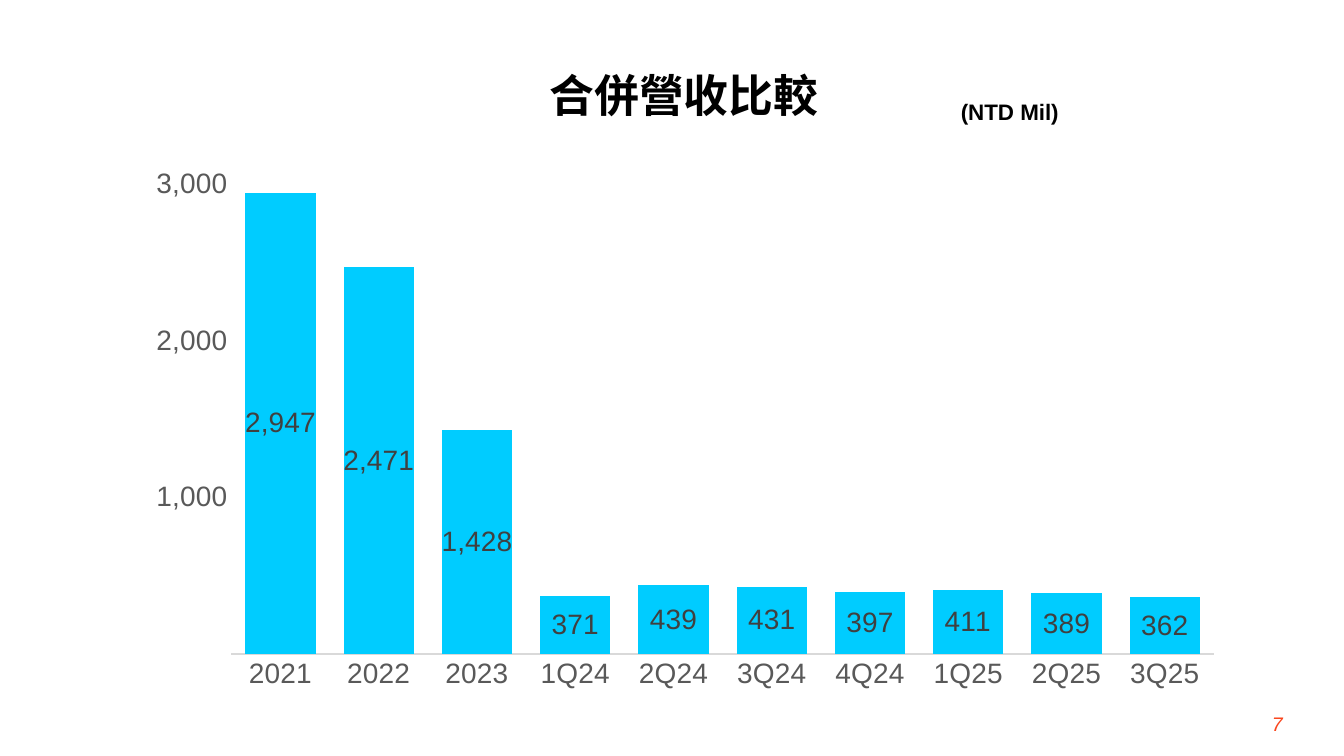
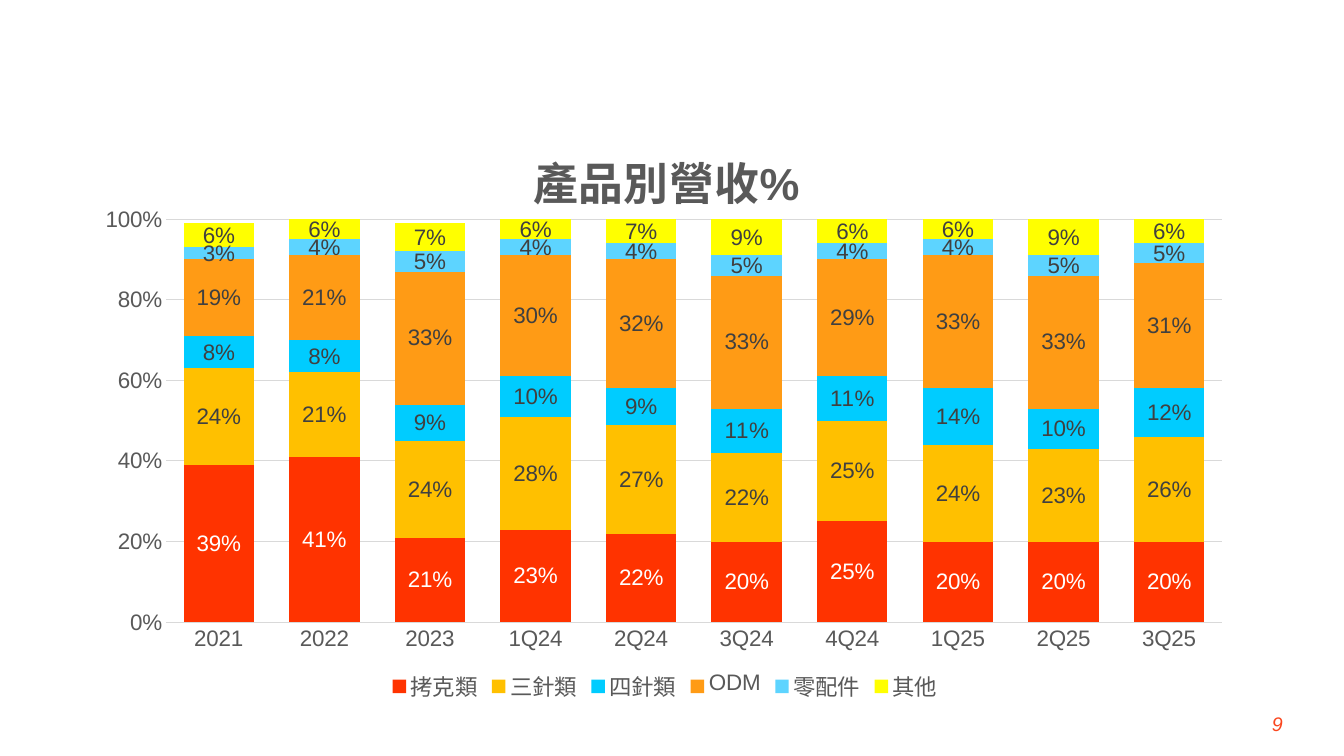
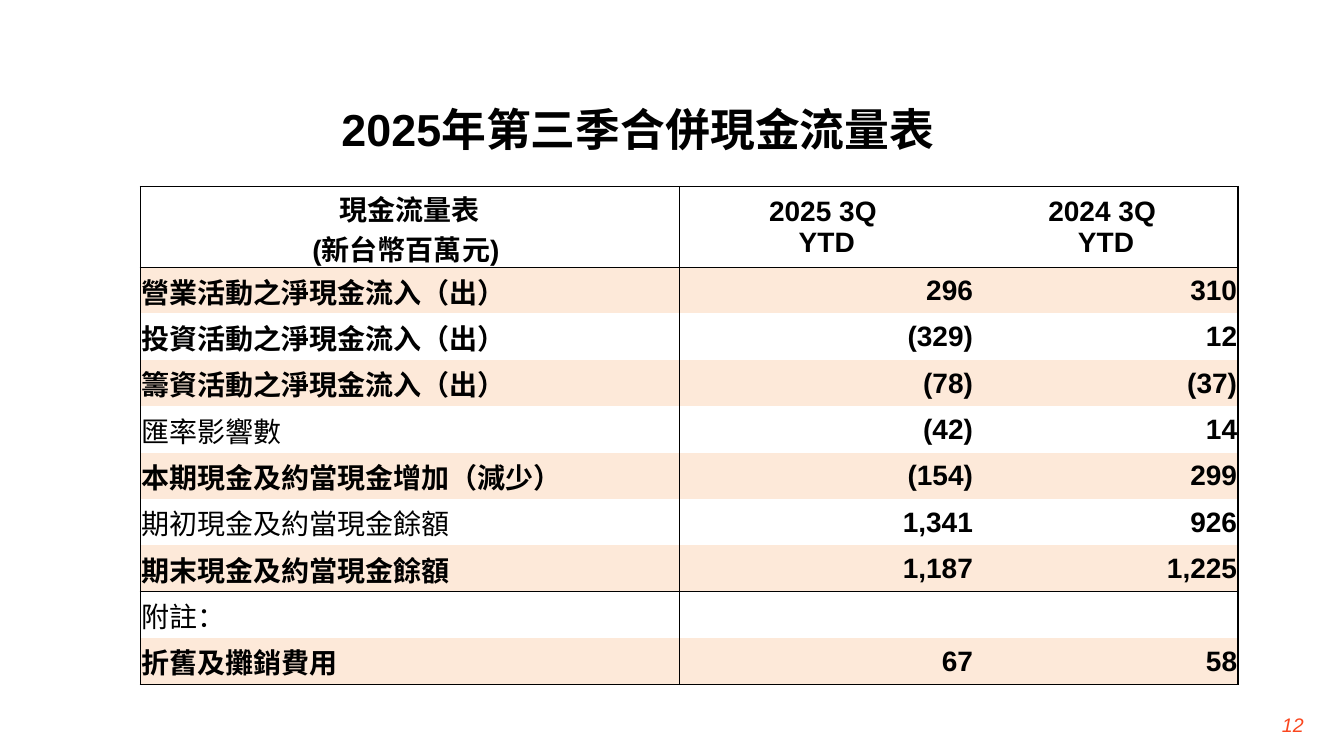
from dataclasses import dataclass
from typing import Any, Optional

from lxml import etree
from pptx import Presentation
from pptx.chart.data import CategoryChartData
from pptx.dml.color import RGBColor
from pptx.enum.chart import XL_CHART_TYPE as ChartType
from pptx.enum.chart import XL_LABEL_POSITION as LabelPosition
from pptx.enum.chart import XL_LEGEND_POSITION as LegendPosition
from pptx.enum.chart import XL_TICK_MARK as TickMark
from pptx.enum.shapes import MSO_SHAPE as Preset
from pptx.enum.text import MSO_ANCHOR as Anchor
from pptx.enum.text import PP_ALIGN as Align
from pptx.oxml.ns import qn
from pptx.util import Inches, Pt

COLORS = {
    "white": "FFFFFF", "black": "000000", "page": "FA461E", "axis": "595959",
    "rule": "D9D9D9", "label": "404040", "band": "FDE9D9", "cyan": "00CCFF",
    "red": "FF3300", "amber": "FFC000", "orange": "FF9B15", "sky": "5DD4FF",
    "yellow": "FFFF00",
}
LATIN = "Arial"
CJK = "Noto Sans CJK TC"
TITLE_FORMAT = {"size": Pt(32), "bold": True}
PAGE_FORMAT = {"size": Pt(14), "italic": True}
UNIT_FORMAT = {"size": Pt(16), "bold": True}
PERIODS = ["2021", "2022", "2023", "1Q24", "2Q24", "3Q24", "4Q24", "1Q25", "2Q25", "3Q25"]
THOUSANDS = r"#,###,;[Red]\(#,\)"

Box = tuple[float, float, float, float]


@dataclass(frozen=True)
class Series:
    name: str
    values: list[float]
    color: str
    label_color: str = "label"


@dataclass(frozen=True)
class ChartSpec:
    box: Box
    plot: Box
    series: list[Series]
    number_format: str
    maximum: float
    major: float
    size: int
    gap: int
    axis_width: float
    title: Optional[str] = None
    gridlines: bool = False
    legend: bool = False


@dataclass(frozen=True)
class CashRow:
    label: str
    current: str = ""
    previous: str = ""
    bold: bool = True


REVENUE = ChartSpec(
    box=(1.31, 1.56, 10.95, 5.36),
    plot=(0.09, 0.05, 0.89, 0.87),
    series=[Series("Series 1", [1000 * v for v in (
        2947, 2471, 1428, 371, 439, 431, 397, 411, 389, 362)], "cyan")],
    number_format=THOUSANDS, maximum=3000000, major=1000000,
    size=20, gap=40, axis_width=1,
)
PRODUCTS = ChartSpec(
    box=(0.84, 1.04, 11.51, 5.97),
    plot=(0.07, 0.19, 0.91, 0.67),
    series=[
        Series("拷克類", [0.39, 0.41, 0.21, 0.23, 0.22, 0.2, 0.25, 0.2, 0.2, 0.2], "red", "white"),
        Series("三針類", [0.24, 0.21, 0.24, 0.28, 0.27, 0.22, 0.25, 0.24, 0.23, 0.26], "amber"),
        Series("四針類", [0.08, 0.08, 0.09, 0.1, 0.09, 0.11, 0.11, 0.14, 0.1, 0.12], "cyan"),
        Series("ODM", [0.19, 0.21, 0.33, 0.3, 0.32, 0.33, 0.29, 0.33, 0.33, 0.31], "orange"),
        Series("零配件", [0.03, 0.04, 0.05, 0.04, 0.04, 0.05, 0.04, 0.04, 0.05, 0.05], "sky"),
        Series("其他", [0.06, 0.06, 0.07, 0.06, 0.07, 0.09, 0.06, 0.06, 0.09, 0.06], "yellow"),
    ],
    number_format="0%", maximum=1, major=0.2,
    size=16, gap=50, axis_width=0.75,
    title="產品別營收%", gridlines=True, legend=True,
)
CASH_HEADERS = [
    [[("現金流量表", CJK)], [("(", LATIN), ("新台幣百萬元", CJK), (") ", LATIN)]],
    [[("2025 3Q ", LATIN)], [("YTD", LATIN)]],
    [[("2024 3Q ", LATIN)], [("YTD", LATIN)]],
]
CASH_ROWS = [
    CashRow("營業活動之淨現金流入（出）", "296", "310"),
    CashRow("投資活動之淨現金流入（出）", "(329)", "12"),
    CashRow("籌資活動之淨現金流入（出）", "(78)", "(37)"),
    CashRow("匯率影響數", "(42)", "14", bold=False),
    CashRow("本期現金及約當現金增加（減少）", "(154)", "299"),
    CashRow("期初現金及約當現金餘額", "1,341", "926", bold=False),
    CashRow("期末現金及約當現金餘額", "1,187", "1,225"),
    CashRow("附註：", bold=False),
    CashRow("折舊及攤銷費用", "67", "58"),
]


def rgb(name: str) -> RGBColor:
    return RGBColor.from_string(COLORS[name])


def inches(box: Box) -> list[int]:
    return [Inches(value) for value in box]


def apply(target: Any, formats: dict[str, Any]) -> None:
    for attribute, value in formats.items():
        setattr(target, attribute, value)


def style_font(font: Any, color: str, formats: dict[str, Any], face: str = LATIN) -> None:
    apply(font, {"name": face, **formats})
    font.color.rgb = rgb(color)


def add_run(paragraph: Any, text: str, color: str, formats: dict[str, Any],
            face: str = LATIN) -> None:
    run = paragraph.add_run()
    run.text = text
    style_font(run.font, color, formats, face)
    east_asian = etree.Element(qn("a:ea"), typeface=CJK)
    run.font._element.find(qn("a:latin")).addnext(east_asian) if hasattr(
        run.font, "_element") else run._r.rPr.find(qn("a:latin")).addnext(east_asian)


def add_text(slide: Any, box: Box, text: str, color: str, formats: dict[str, Any],
             align: Align, wrap: bool = True) -> None:
    frame = slide.shapes.add_textbox(*inches(box)).text_frame
    frame.word_wrap = wrap
    frame.paragraphs[0].alignment = align
    add_run(frame.paragraphs[0], text, color, formats)


def add_page_number(slide: Any, number: int, left: float = 12.07, top: float = 7.01) -> None:
    add_text(slide, (left, top, 0.75, 0.4), str(number), "page", PAGE_FORMAT, Align.RIGHT)


def add_title(slide: Any, box: Box, text: str, align: Align) -> None:
    plate = slide.shapes.add_shape(Preset.ROUNDED_RECTANGLE, *inches(box))
    plate.adjustments[0] = 0.23
    plate.shadow.inherit = False
    plate.fill.solid()
    plate.fill.fore_color.rgb = rgb("white")
    plate.line.fill.background()
    apply(plate.text_frame, {"word_wrap": True, "vertical_anchor": Anchor.MIDDLE})
    plate.text_frame.paragraphs[0].alignment = align
    add_run(plate.text_frame.paragraphs[0], text, "black", TITLE_FORMAT)


def place(element: Any, index: int, values: dict[str, Any]) -> None:
    for present in element.findall(qn("c:layout")):
        element.remove(present)
    layout = etree.Element(qn("c:layout"))
    manual = etree.SubElement(layout, qn("c:manualLayout"))
    for tag, value in values.items():
        etree.SubElement(manual, qn(f"c:{tag}"), val=str(value))
    element.insert(index, layout)


def add_column_chart(slide: Any, spec: ChartSpec) -> None:
    data = CategoryChartData()
    data.categories = PERIODS
    for series in spec.series:
        data.add_series(series.name, series.values)
    chart = slide.shapes.add_chart(ChartType.COLUMN_STACKED, *inches(spec.box), data).chart
    text_format = {"size": Pt(spec.size), "bold": False}
    style_font(chart.font, "black", text_format)

    apply(chart, {"has_title": spec.title is not None, "has_legend": spec.legend})
    edges = {"xMode": "edge", "yMode": "edge"}
    if spec.title:
        add_run(chart.chart_title.text_frame.paragraphs[0], spec.title, "axis", TITLE_FORMAT)
        place(chart.chart_title.element, 1, {**edges, "x": 0.38, "y": 0.05})
    if spec.legend:
        apply(chart.legend, {"position": LegendPosition.BOTTOM, "include_in_layout": False})
        style_font(chart.legend.font, "axis", text_format)
    place(chart.element.find(f".//{qn('c:plotArea')}"), 0,
          {"layoutTarget": "inner", **edges, **dict(zip("xywh", spec.plot))})

    periods, amounts = chart.category_axis, chart.value_axis
    for axis in (periods, amounts):
        apply(axis, {"major_tick_mark": TickMark.NONE, "minor_tick_mark": TickMark.NONE})
        style_font(axis.tick_labels.font, "axis", text_format)
    apply(amounts, {"minimum_scale": 0, "maximum_scale": spec.maximum,
                    "major_unit": spec.major, "has_major_gridlines": spec.gridlines})
    amounts.format.line.fill.background()
    number_format = {"number_format": spec.number_format, "number_format_is_linked": False}
    apply(amounts.tick_labels, number_format)
    rules = [periods.format.line]
    if spec.gridlines:
        rules.append(amounts.major_gridlines.format.line)
    for rule in rules:
        rule.color.rgb = rgb("rule")
        rule.width = Pt(spec.axis_width)

    columns = chart.plots[0]
    apply(columns, {"gap_width": spec.gap, "overlap": 100, "vary_by_categories": False})
    for drawn, series in zip(columns.series, spec.series):
        drawn.format.fill.solid()
        drawn.format.fill.fore_color.rgb = rgb(series.color)
        apply(drawn.data_labels, {"show_value": True, "position": LabelPosition.CENTER,
                                  **number_format})
        style_font(drawn.data_labels.font, series.label_color, text_format)


def set_borders(cell: Any, sides: dict[str, bool]) -> None:
    properties = cell._tc.get_or_add_tcPr()
    for index, (side, visible) in enumerate(sides.items()):
        line = etree.Element(qn(f"a:ln{side}"), w=str(Pt(1)))
        if visible:
            fill = etree.SubElement(line, qn("a:solidFill"))
            etree.SubElement(fill, qn("a:srgbClr"), val=COLORS["black"])
        else:
            etree.SubElement(line, qn("a:noFill"))
        properties.insert(index, line)


def fill_cell(cell: Any, lines: list[list[tuple[str, str]]], align: Align, bold: bool) -> None:
    apply(cell, {"vertical_anchor": Anchor.MIDDLE, "margin_left": Inches(0.01),
                 "margin_right": Inches(0.01), "margin_top": Inches(0.01), "margin_bottom": 0})
    paragraph = cell.text_frame.paragraphs[0]
    paragraph.alignment = align
    for index, line in enumerate(lines):
        if index:
            paragraph.add_line_break()
        for text, face in line:
            if text:
                add_run(paragraph, text, "black", {"size": Pt(20), "bold": bold}, face)


def add_cash_table(slide: Any) -> None:
    widths = [5.35, 2.92, 2.62]
    heights = [0.8] + [0.46] * len(CASH_ROWS)
    table = slide.shapes.add_table(len(heights), len(widths), *inches(
        (1.39, 1.85, sum(widths), sum(heights)))).table
    apply(table, {"first_row": False, "horz_banding": False})
    for column, width in zip(table.columns, widths):
        column.width = Inches(width)
    for row, height in zip(table.rows, heights):
        row.height = Inches(height)

    for column, lines in enumerate(CASH_HEADERS):
        fill_cell(table.cell(0, column), lines, Align.CENTER, True)
    for row, cash in enumerate(CASH_ROWS, start=1):
        fill_cell(table.cell(row, 0), [[(cash.label, CJK)]], Align.LEFT, cash.bold)
        for column, amount in enumerate((cash.current, cash.previous), start=1):
            fill_cell(table.cell(row, column), [[(amount, LATIN)]], Align.RIGHT, True)

    ruled_rows = {0, 1, 8, len(heights)}
    ruled_columns = {0, 1, len(widths)}
    for row in range(len(heights)):
        for column in range(len(widths)):
            cell = table.cell(row, column)
            cell.fill.solid()
            cell.fill.fore_color.rgb = rgb("band" if row % 2 else "white")
            set_borders(cell, {
                "L": column in ruled_columns, "R": column + 1 in ruled_columns,
                "T": row in ruled_rows, "B": row + 1 in ruled_rows,
            })


def main() -> None:
    deck = Presentation()
    deck.slide_width, deck.slide_height = Inches(13.33), Inches(7.5)
    revenue, products, cash = [deck.slides.add_slide(deck.slide_layouts[6]) for _ in range(3)]

    add_text(revenue, (9.42, 0.92, 1.19, 0.37), "(NTD Mil)", "black", UNIT_FORMAT,
             Align.CENTER, wrap=False)
    add_page_number(revenue, 7)
    add_title(revenue, (5.25, 0.65, 3.07, 0.58), "合併營收比較", Align.CENTER)
    add_column_chart(revenue, REVENUE)

    add_page_number(products, 9)
    add_column_chart(products, PRODUCTS)

    add_title(cash, (3.25, 0.99, 6.3, 0.58), "2025年第三季合併現金流量表", Align.LEFT)
    add_page_number(cash, 12, left=12.28, top=7.02)
    add_cash_table(cash)

    deck.save("out.pptx")


if __name__ == "__main__":
    main()
